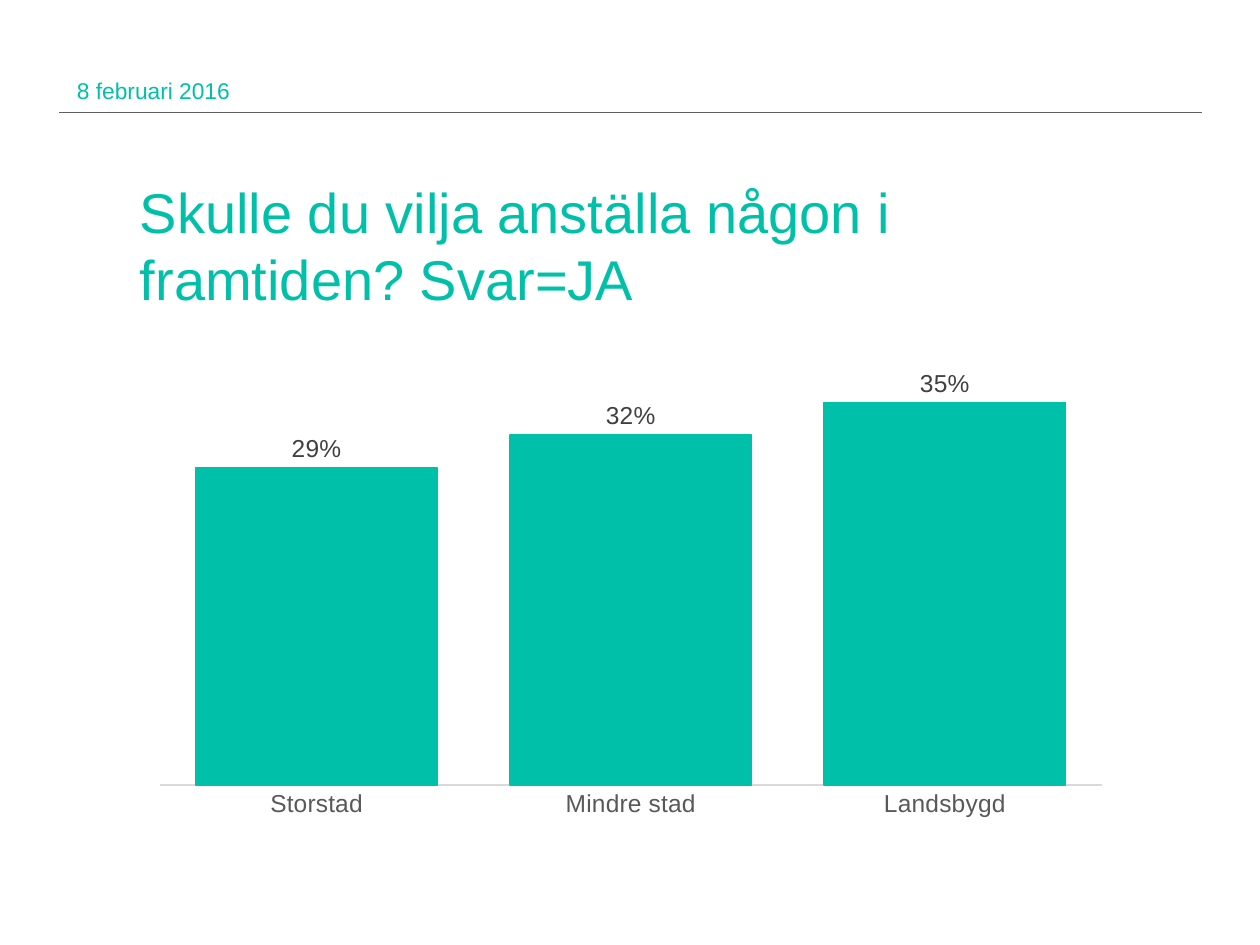
from lxml import etree
from pptx import Presentation
from pptx.chart.data import CategoryChartData
from pptx.dml.color import RGBColor
from pptx.enum import chart as ch, shapes, text
from pptx.oxml import ns, parse_xml
from pptx.util import Pt

HUES = {"teal": "00C0A9", "rule": "606060", "axis": "D9D9D9",
        "tick": "595959", "label": "404040", "black": "000000"}
FACE = "Arial"


def hue(name):
    return RGBColor.from_string(HUES[name])


def style(font, size, color):
    font.name, font.size, font.bold = FACE, Pt(size), False
    font.color.rgb = hue(color)


def write(slide, box, words, size=13, color="teal", anchor="TOP", lead=None):
    frame = slide.shapes.add_textbox(*map(Pt, box)).text_frame
    frame.word_wrap = True
    frame.margin_left = frame.margin_right = 0
    frame.margin_top = frame.margin_bottom = 0
    frame.vertical_anchor = text.MSO_ANCHOR[anchor]
    para = frame.paragraphs[0]
    if lead:
        para.line_spacing = Pt(lead)
    run = para.add_run()
    run.text = words
    style(run.font, size, color)


def header(slide, box):
    left, top, width, height = box
    base = Pt(top + height)
    rule = slide.shapes.add_connector(
        shapes.MSO_CONNECTOR.STRAIGHT, Pt(left), base, Pt(left + width), base)
    rule.line.color.rgb = hue("rule")
    rule.line.width = Pt(0.5)
    etree.SubElement(rule._element.spPr, ns.qn("a:effectLst"))
    write(slide, (left + 10, top, 168, 29), "8 februari 2016", anchor="MIDDLE")


def place(chart, **part):
    marks = "".join(f'<c:{key} val="{val}"/>' for key, val in part.items())
    area = chart._chartSpace.chart.plotArea
    for old in area.findall(ns.qn("c:layout")):
        area.remove(old)
    area.insert(0, parse_xml(
        f'<c:layout {ns.nsdecls("c")}><c:manualLayout>'
        '<c:layoutTarget val="inner"/><c:xMode val="edge"/>'
        f'<c:yMode val="edge"/>{marks}</c:manualLayout></c:layout>'))


def columns(slide, box):
    data = CategoryChartData(number_format="0%")
    data.categories = ["Storstad", "Mindre stad", "Landsbygd"]
    data.add_series("Series 1", [0.29, 0.32, 0.35])
    chart = slide.shapes.add_chart(
        ch.XL_CHART_TYPE.COLUMN_CLUSTERED, *map(Pt, box), data).chart
    style(chart.font, 10, "black")
    chart.has_title = chart.has_legend = False
    place(chart, x=0.02, y=0.02, w=0.96, h=0.89)

    cats = chart.category_axis
    cats.major_tick_mark = ch.XL_TICK_MARK.NONE
    cats.format.line.color.rgb = hue("axis")
    cats.format.line.width = Pt(0.75)
    style(cats.tick_labels.font, 14, "tick")

    vals = chart.value_axis
    vals.visible = vals.has_major_gridlines = False
    vals.minimum_scale, vals.maximum_scale = 0, 0.4

    plot = chart.plots[0]
    plot.gap_width = 30
    plot.vary_by_categories = False
    series = plot.series[0]
    series.format.fill.solid()
    series.format.fill.fore_color.rgb = hue("teal")
    series.format.line.color.rgb = hue("teal")
    series.format.line.width = Pt(0.75)
    labels = series.data_labels
    labels.show_value = True
    labels.number_format = "0%"
    labels.number_format_is_linked = False
    labels.position = ch.XL_LABEL_POSITION.OUTSIDE_END
    style(labels.font, 14, "label")


def main():
    deck = Presentation()
    deck.slide_width, deck.slide_height = Pt(720), Pt(540)
    slide = deck.slides.add_slide(deck.slide_layouts[6])
    header(slide, (34, 37, 653, 27.5))
    write(slide, (80, 102, 561, 69),
          "Skulle du vilja anställa någon i framtiden? Svar=JA", size=32, lead=38)
    columns(slide, (80, 193, 561, 281))
    deck.save("out.pptx")


if __name__ == "__main__":
    main()
